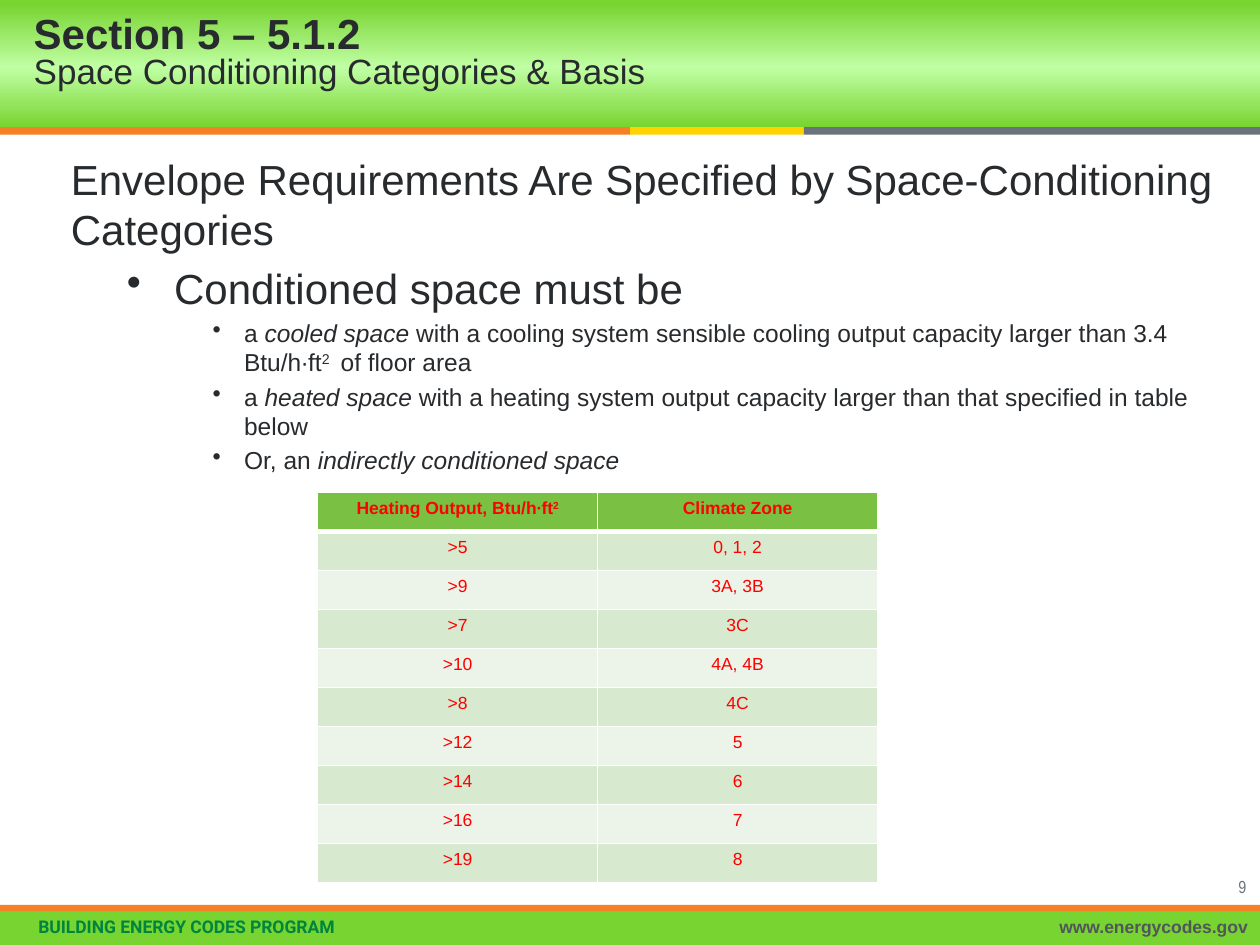
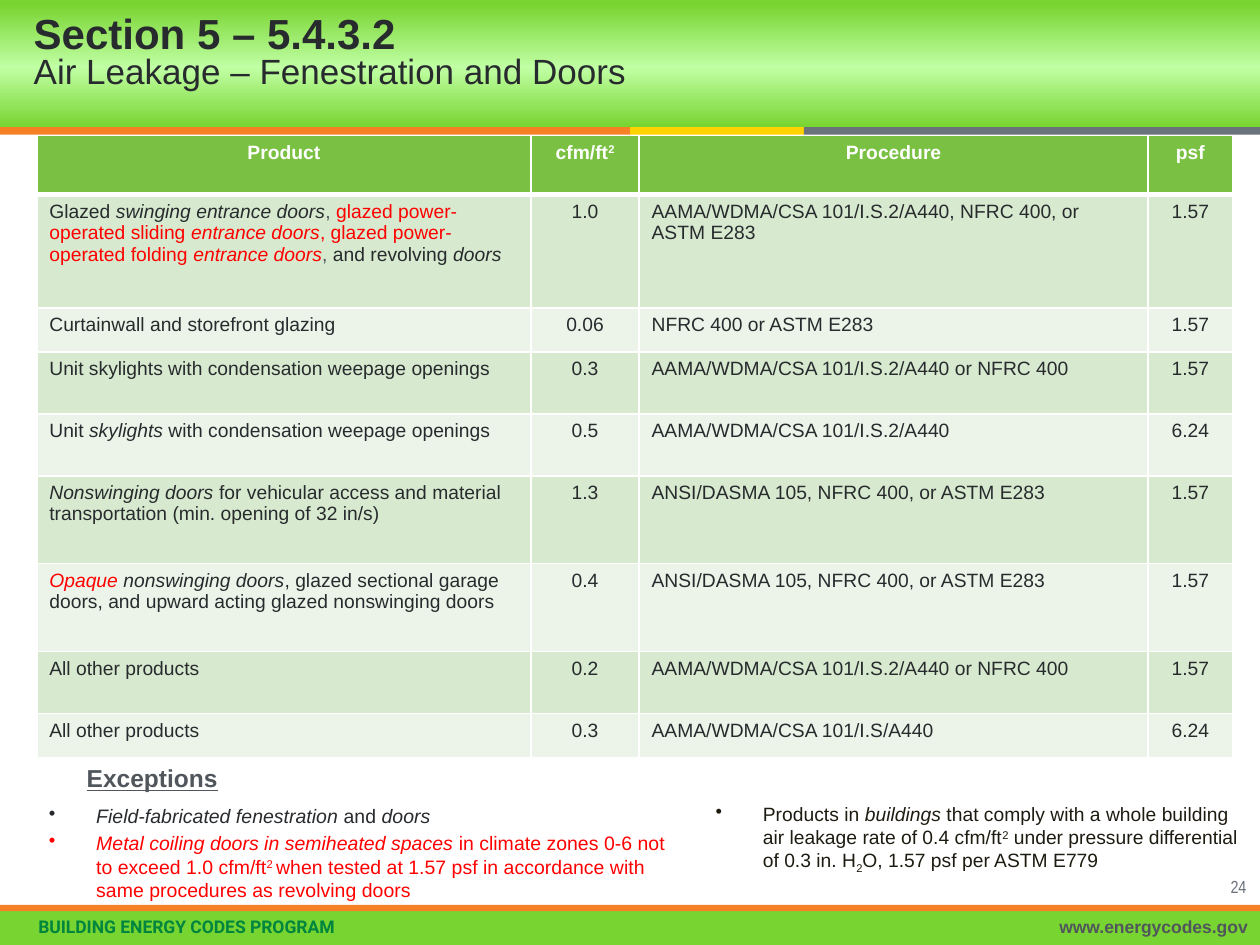
from collections import namedtuple
from copy import deepcopy
from itertools import groupby

from lxml import etree
from pptx import Presentation
from pptx import util as u
from pptx.dml.color import RGBColor
from pptx.enum import shapes, text
from pptx.oxml import ns

Box = namedtuple("Box", "left top width height")
Style = namedtuple("Style", "size color bold font", defaults=(False, "Arial"))

# Shared colours
GREEN = RGBColor(0x78, 0xD4, 0x30)
PALE_GREEN = RGBColor(0xC0, 0xFF, 0xA4)
DARK_GREEN = RGBColor(0x00, 0x85, 0x3F)
ORANGE = RGBColor(0xF5, 0x80, 0x25)
YELLOW = RGBColor(0xFF, 0xD2, 0x00)
SLATE = RGBColor(0x6A, 0x73, 0x7B)
GREY = RGBColor(0x50, 0x56, 0x5C)
INK = RGBColor(0x28, 0x2B, 0x2E)
BROWN_BLACK = RGBColor(0x1E, 0x1C, 0x11)
RED = RGBColor(0xFF, 0x00, 0x00)
WHITE = RGBColor(0xFF, 0xFF, 0xFF)
HEADER_GREEN = RGBColor(0x7A, 0xC1, 0x43)
ROW_GREENS = (RGBColor(0xD7, 0xE9, 0xCF), RGBColor(0xEC, 0xF4, 0xE9))

LEFT, CENTER, RIGHT = (
    text.PP_ALIGN.LEFT, text.PP_ALIGN.CENTER, text.PP_ALIGN.RIGHT)

# Slide-wide regions, in points
SLIDE_WIDTH, SLIDE_HEIGHT = 720, 540
HEADER = Box(0, 0, SLIDE_WIDTH, 72.7)
TITLE = Box(12.2, 0, 467, 62.5)
FOOTER = Box(0, 517, SLIDE_WIDTH, 23)

# Inline marks: *italic*  ^superscript^  ~subscript~  !red!  %grey%
MARKS = "*^~!%"


def write_rich(paragraph, marked_text, style):
    """Fill a paragraph with runs, switching formats at each mark."""
    active = set()
    for is_mark, group in groupby(marked_text, lambda char: char in MARKS):
        piece = "".join(group)
        if is_mark:
            active ^= set(piece)
            continue
        run = paragraph.add_run()
        run.text = piece
        font = run.font
        font.name, font.size, font.bold = style.font, u.Pt(style.size), style.bold
        font.italic = "*" in active
        font.color.rgb = (RED if "!" in active else
                          GREY if "%" in active else style.color)
        if "^" in active:
            font._element.set("baseline", "30000")
        elif "~" in active:
            font._element.set("baseline", "-25000")


def add_rectangle(slide, box, color):
    shape = slide.shapes.add_shape(
        shapes.MSO_SHAPE.RECTANGLE, *(u.Pt(value) for value in box))
    shape.shadow.inherit = False
    shape.line.fill.background()
    shape.fill.solid()
    shape.fill.fore_color.rgb = color
    return shape


def add_text(slide, box, lines, align=LEFT, spacing=1.0,
             anchor=text.MSO_ANCHOR.TOP):
    """Add a text box; each line is a (marked text, style) pair."""
    frame = slide.shapes.add_textbox(*(u.Pt(value) for value in box)).text_frame
    frame.word_wrap = True
    frame.vertical_anchor = anchor
    for index, (marked_text, style) in enumerate(lines):
        paragraph = frame.add_paragraph() if index else frame.paragraphs[0]
        paragraph.alignment = align
        paragraph.line_spacing = spacing
        write_rich(paragraph, marked_text, style)
    return frame


def add_list(slide, box, items):
    """Add a list; each item is (marked text, style, margin, hanging)."""
    frame = add_text(slide, box, [item[:2] for item in items])
    for index, (paragraph, item) in enumerate(zip(frame.paragraphs, items)):
        style, margin, hanging = item[1:]
        if hanging:
            properties = paragraph._p.get_or_add_pPr()
            properties.set("marL", str(u.Pt(margin)))
            properties.set("indent", str(-u.Pt(hanging)))
            etree.SubElement(properties, ns.qn("a:buChar"), char="•")
        if index:
            paragraph.space_before = u.Pt(round(style.size * 0.2, 1))


def add_header(slide, box):
    """Gradient band with the three-colour strip beneath it."""
    band = add_rectangle(slide, box, GREEN)
    band.fill.gradient()
    band.fill.gradient_angle = 90
    stop_list = band._element.spPr.find(".//" + ns.qn("a:gsLst"))
    stop_list.append(deepcopy(stop_list[-1]))
    stops = ((0, GREEN), (0.47, PALE_GREEN), (0.97, GREEN))
    for stop, (position, color) in zip(band.fill.gradient_stops, stops):
        stop.position = position
        stop.color.rgb = color

    left = box.left
    for share, color in ((0.5, ORANGE), (0.138, YELLOW), (0.362, SLATE)):
        width = box.width * share
        add_rectangle(slide, Box(left, box.top + box.height, width, 4.3), color)
        left += width


def add_title(slide, box, section, topic):
    add_text(slide, box,
             [(section, Style(24, INK, True)), (topic, Style(20, INK))],
             spacing=0.8, anchor=text.MSO_ANCHOR.MIDDLE)


def add_footer(slide, box, number):
    """Green band with rule, programme name, web address and page number."""
    right = box.left + box.width
    bar_top = box.top + 3.6
    add_rectangle(slide, Box(box.left, bar_top, box.width, box.height - 3.6), GREEN)
    add_rectangle(slide, Box(box.left, box.top, box.width, 3.6), ORANGE)
    add_text(slide, Box(box.left + 14.8, bar_top + 0.7, 400, 18.7),
             [("BUILDING ENERGY CODES PROGRAM",
               Style(10, DARK_GREEN, True, "Roboto"))], spacing=0.9)
    add_text(slide, Box(right - 289, bar_top + 0.7, 289, 18.7),
             [("www.energycodes.gov", Style(10, GREY, True))], RIGHT, 0.9)
    add_text(slide, Box(right - 52, box.top - 20.2, 51.3, 13),
             [(str(number), Style(10, SLATE, font="Arial Narrow"))], RIGHT)


def add_borders(cell, top, bottom):
    properties = cell._tc.get_or_add_tcPr()
    for tag, width in (("lnL", 1), ("lnR", 1), ("lnT", top), ("lnB", bottom)):
        line = etree.SubElement(properties, ns.qn("a:" + tag), w=str(u.Pt(width)))
        fill = etree.SubElement(line, ns.qn("a:solidFill"))
        etree.SubElement(fill, ns.qn("a:srgbClr"), val=str(WHITE))


def add_banded_table(slide, left, top, widths, heights, rows, alignments,
                     header_style, body_style):
    table = slide.shapes.add_table(
        len(rows), len(widths), u.Pt(left), u.Pt(top),
        u.Pt(sum(widths)), u.Pt(sum(heights))).table
    for column, width in zip(table.columns, widths):
        column.width = u.Pt(width)
    for row_index, (height, values) in enumerate(zip(heights, rows)):
        table.rows[row_index].height = u.Pt(height)
        is_header = row_index == 0
        for column_index, value in enumerate(values):
            cell = table.cell(row_index, column_index)
            add_borders(cell, 3 if row_index == 1 else 1, 3 if is_header else 1)
            cell.fill.solid()
            cell.fill.fore_color.rgb = (
                HEADER_GREEN if is_header else ROW_GREENS[(row_index - 1) % 2])
            paragraph = cell.text_frame.paragraphs[0]
            paragraph.alignment = CENTER if is_header else alignments[column_index]
            write_rich(paragraph, value, header_style if is_header else body_style)


def add_base_slide(presentation, section, topic, number):
    slide = presentation.slides.add_slide(presentation.slide_layouts[6])
    add_header(slide, HEADER)
    add_footer(slide, FOOTER, number)
    add_title(slide, TITLE, section, topic)
    return slide


def build_categories_slide(presentation):
    slide = add_base_slide(presentation, "Section 5 – 5.1.2",
                           "Space Conditioning Categories & Basis", 9)
    # Requirements list
    large, small = Style(24, INK), Style(14, INK)
    conditions = (
        "a *cooled space *with a cooling system sensible cooling output capacity "
        "larger than 3.4 Btu/h∙ft^2 ^ of floor area",
        "a *heated space *with a heating system output capacity larger than that "
        "specified in table below",
        "Or, an *indirectly conditioned space*",
    )
    add_list(slide, Box(33.4, 84.2, 680.4, 294), [
        ("Envelope Requirements Are Specified by Space-Conditioning Categories",
         large, 0, 0),
        ("Conditioned space must be", large, 59, 27),
        *((condition, small, 99, 18) for condition in conditions),
    ])
    # Heating output by climate zone
    rows = [
        ("Heating Output, Btu/h∙ft^2^", "Climate Zone"),
        (">5", "0, 1, 2"), (">9", "3A, 3B"), (">7", "3C"), (">10", "4A, 4B"),
        (">8", "4C"), (">12", "5"), (">14", "6"), (">16", "7"), (">19", "8"),
    ]
    add_banded_table(slide, 181.5, 281.5, [160, 160], [22.3] * len(rows), rows,
                     [CENTER, CENTER], Style(10, RED, True), Style(10, RED))


def build_leakage_slide(presentation):
    slide = add_base_slide(presentation, "Section 5 – 5.4.3.2",
                           "Air Leakage – Fenestration and Doors", 24)
    # Leakage limits by product
    rows = [
        ("Product", "cfm/ft^2^", "Procedure", "psf"),
        ("Glazed *swinging entrance doors*%, %!glazed power-operated sliding "
         "*entrance doors*, glazed power-operated folding *entrance doors*!%, %"
         "and revolving *doors*",
         "1.0", "AAMA/WDMA/CSA 101/I.S.2/A440, NFRC 400, or ASTM E283", "1.57"),
        ("Curtainwall and storefront glazing",
         "0.06", "NFRC 400 or ASTM E283", "1.57"),
        ("Unit skylights with condensation weepage openings",
         "0.3", "AAMA/WDMA/CSA 101/I.S.2/A440 or NFRC 400", "1.57"),
        ("Unit *skylights* with condensation weepage openings",
         "0.5", "AAMA/WDMA/CSA 101/I.S.2/A440", "6.24"),
        ("*Nonswinging doors *for vehicular access and material transportation "
         "(min. opening of 32 in/s)",
         "1.3", "ANSI/DASMA 105, NFRC 400, or ASTM E283", "1.57"),
        ("*!Opaque !nonswinging doors*, glazed sectional garage doors, and upward "
         "acting glazed nonswinging doors",
         "0.4", "ANSI/DASMA 105, NFRC 400, or ASTM E283", "1.57"),
        ("All other products",
         "0.2", "AAMA/WDMA/CSA 101/I.S.2/A440 or NFRC 400", "1.57"),
        ("All other products", "0.3", "AAMA/WDMA/CSA 101/I.S/A440", "6.24"),
    ]
    add_banded_table(slide, 21, 77.5, [282.5, 61.7, 291, 48.2],
                     [33.7, 64.7, 25.3, 35.4, 35.4, 50.2, 50.2, 35.4, 25.3],
                     rows, [LEFT, CENTER, LEFT, CENTER],
                     Style(11, WHITE, True), Style(11, INK))
    # Exceptions
    heading = add_text(slide, Box(42.5, 432.7, 91.5, 26),
                       [("Exceptions", Style(14, GREY, True))])
    heading.paragraphs[0].runs[0].font.underline = True
    left_style, right_style = Style(11.1, INK), Style(11, BROWN_BLACK)
    add_list(slide, Box(20.9, 456, 367.2, 58), [
        ("*Field-fabricated fenestration *and *doors*", left_style, 27, 27),
        ("!*Metal coiling doors in semiheated spaces *in climate zones 0-6 not to "
         "exceed 1.0 cfm/ft^2 ^when tested at 1.57 psf in accordance with same "
         "procedures as revolving doors!", left_style, 27, 27),
    ])
    add_list(slide, Box(401.8, 455, 318.2, 60), [
        ("Products in *buildings *that comply with a whole building air leakage "
         "rate of 0.4 cfm/ft^2^ under pressure differential of 0.3 in. H~2~O, "
         "1.57 psf per ASTM E779", right_style, 27, 27),
    ])


def main():
    presentation = Presentation()
    presentation.slide_width = u.Pt(SLIDE_WIDTH)
    presentation.slide_height = u.Pt(SLIDE_HEIGHT)
    build_categories_slide(presentation)
    build_leakage_slide(presentation)
    presentation.save("out.pptx")


if __name__ == "__main__":
    main()
